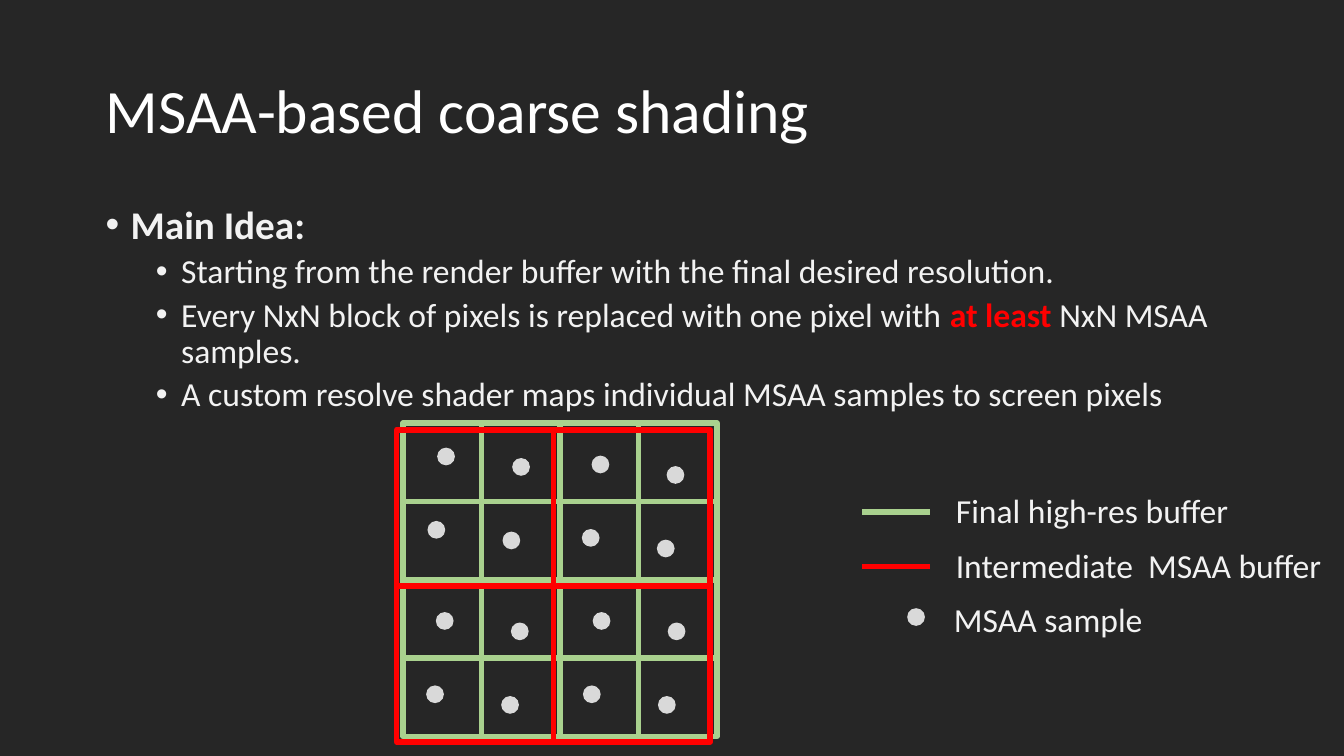
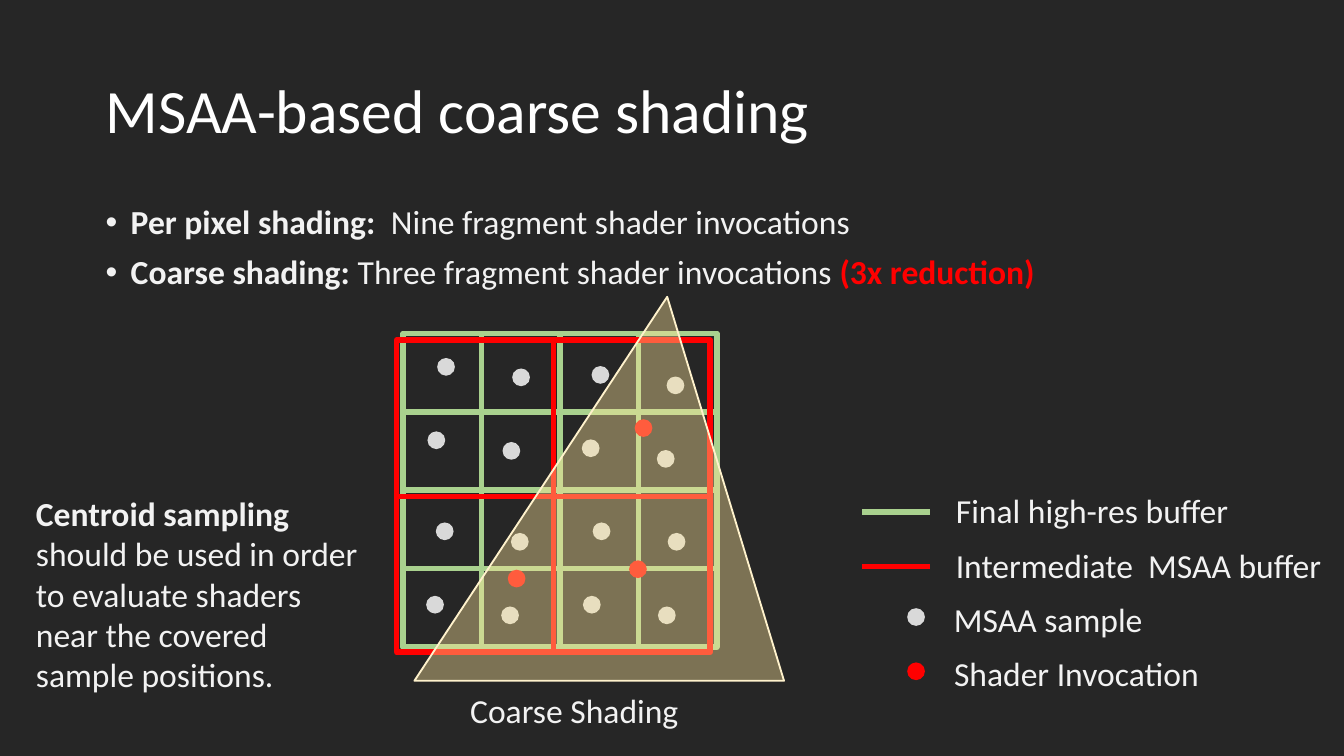
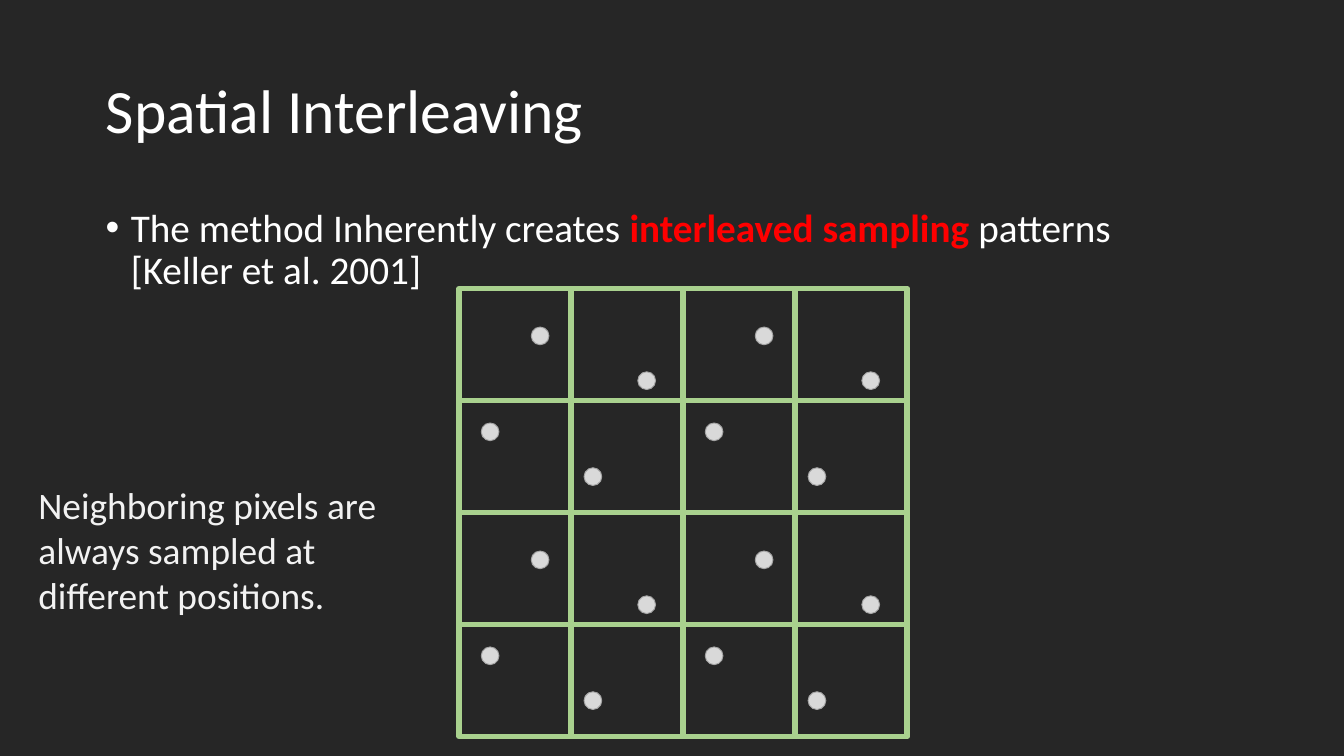
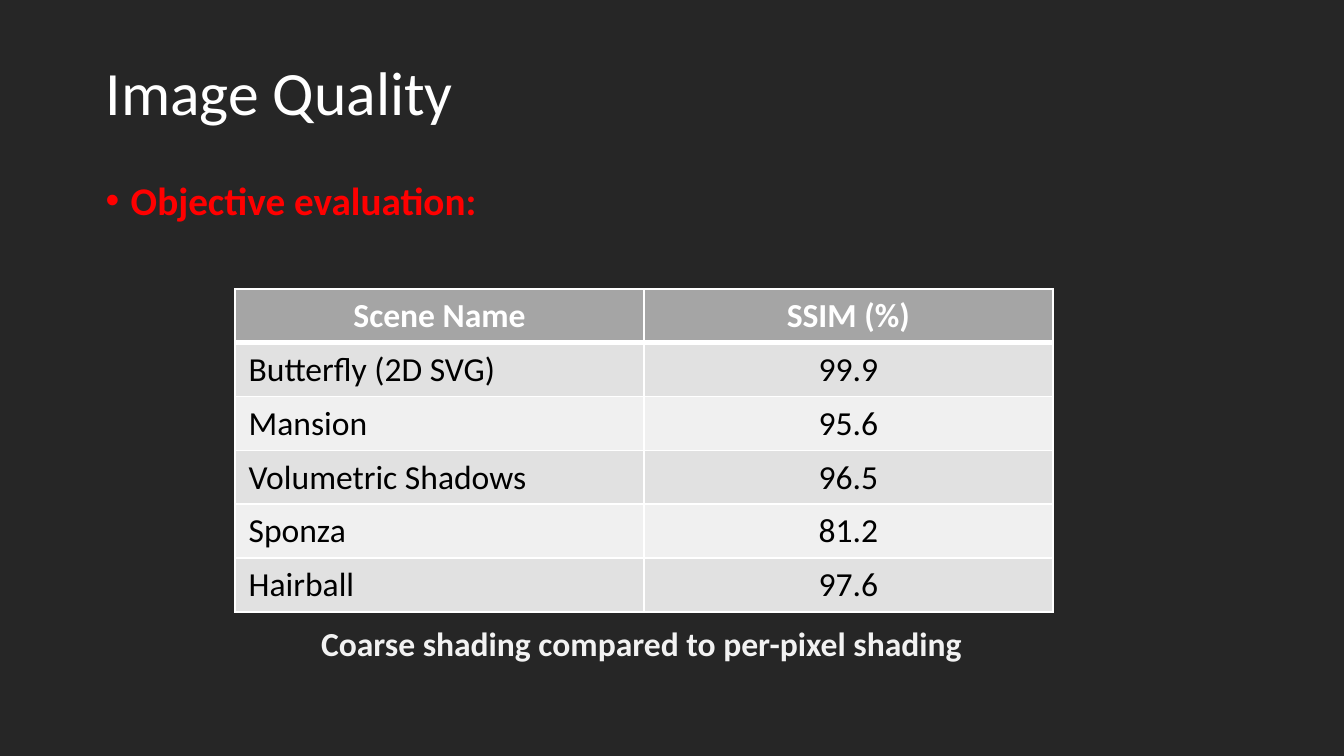
"""Build four slides on MSAA-based coarse shading."""
from itertools import product

from lxml import etree
from pptx import Presentation
from pptx.dml.color import RGBColor
from pptx.enum import shapes, text
from pptx.oxml import ns
from pptx.util import Pt

COLORS = {
    "background": "262626", "title": "FFFFFF", "body": "F2F2F2", "accent": "FF0000",
    "pixel": "A9D18E", "sample": "D9D9D9", "sample_edge": "A5A5A5",
    "triangle": "FFE699", "triangle_edge": "FFF2CC", "header": "A5A5A5",
    "band_odd": "E1E1E1", "band_even": "F0F0F0", "cell": "000000", "border": "FFFFFF",
}
FONT = "Calibri"
DOT = 9.5

IDEA = [
    (0, 21, [("Main Idea:", "body", True)]),
    (1, 18, [("Starting from the render buffer with the final desired resolution.", "body", False)]),
    (1, 18, [("Every NxN block of pixels is replaced with one pixel with ", "body", False),
             ("at least ", "accent", True), ("NxN MSAA samples.", "body", False)]),
    (1, 18, [("A custom resolve shader maps individual MSAA samples to screen pixels", "body", False)]),
]
COUNTS = [
    (0, 18, [("Per pixel shading:  ", "body", True),
             ("Nine fragment shader invocations", "body", False)]),
    (0, 18, [("Coarse shading: ", "body", True),
             ("Three fragment shader invocations ", "body", False),
             ("(3x reduction)", "accent", True)]),
]
INTERLEAVING = [
    (0, 21, [("The method Inherently creates ", "title", False),
             ("interleaved sampling ", "accent", True),
             ("patterns \n[Keller et al. 2001]", "title", False)]),
]
EVALUATION = [(0, 21, [("Objective evaluation:", "accent", True)])]
CENTROID = [("Centroid sampling ", "body", True),
            ("should be used in order to evaluate shaders near the covered sample positions.",
             "body", False)]
NEIGHBORS = [("Neighboring pixels are always sampled at different positions.", "body", False)]
CAPTION = [("Coarse shading compared to per-pixel shading", "body", True)]

LEGEND = [
    ("Final high-res buffer", "line", "pixel", 165),
    ("Intermediate  MSAA buffer", "line", "accent", 213),
    ("MSAA sample", "dot", "sample", 117),
    ("Shader Invocation", "dot", "accent", 147.6),
]
SCENES = [
    ("Scene Name", "SSIM (%)"), ("Butterfly (2D SVG)", "99.9"), ("Mansion", "95.6"),
    ("Volumetric Shadows", "96.5"), ("Sponza", "81.2"), ("Hairball", "97.6"),
]
MSAA_SAMPLES = [(18.2, 13.2), (13, 52.5), (58.4, 18.8), (53.2, 58.2)]
MSAA_SHIFTS = {(0, 0): (0, 0), (1, 0): (-1.3, 4.3), (0, 1): (-0.7, 4.1), (1, 1): (-0.7, 4.1)}
INTERLEAVED_SAMPLES = [(11.8, 72), (38.6, 20.6), (95.7, 44.6), (66.9, 96)]
INVOCATIONS = [(272, 305.2), (337, 300.2), (340, 224.6)]


def rgb(name):
    return RGBColor.from_string(COLORS[name])


def style_runs(p, runs, size):
    for content, color, bold in runs:
        for i, part in enumerate(content.split("\n")):
            if i:
                p.add_line_break()
            r = p.add_run()
            r.text = part
            r.font.name, r.font.size, r.font.bold = FONT, Pt(size), bold
            r.font.color.rgb = rgb(color)


def add_text(s, box, runs, size=18, wrap=False):
    tf = s.shapes.add_textbox(*map(Pt, box)).text_frame
    tf.word_wrap = wrap
    tf.auto_size = text.MSO_AUTO_SIZE.SHAPE_TO_FIT_TEXT
    style_runs(tf.paragraphs[0], runs, size)


def add_bullets(s, box, items):
    tf = s.shapes.add_textbox(*map(Pt, box)).text_frame
    tf.word_wrap = True
    for i, (level, size, runs) in enumerate(items):
        p = tf.add_paragraph() if i else tf.paragraphs[0]
        pPr = p._p.get_or_add_pPr()
        pPr.set("marL", str(Pt(13.5 + 27 * level)))
        pPr.set("indent", str(Pt(-13.5)))
        etree.SubElement(pPr, ns.qn("a:buFont")).set("typeface", "Arial")
        etree.SubElement(pPr, ns.qn("a:buChar")).set("char", "•")
        p.level, p.line_spacing = level, 0.9
        if i:
            p.space_before = Pt(3.75 if level else 7.5)
        style_runs(p, runs, size)


def add_shape(s, kind, box, fill=None, line=None, width=3):
    sp = s.shapes.add_shape(kind, *map(Pt, box))
    sp.shadow.inherit = False
    if fill:
        sp.fill.solid()
        sp.fill.fore_color.rgb = rgb(fill)
    else:
        sp.fill.background()
    if line:
        sp.line.color.rgb, sp.line.width = rgb(line), Pt(width)
    else:
        sp.line.fill.background()
    return sp


def add_line(s, color, x1, y1, x2, y2):
    c = s.shapes.add_connector(shapes.MSO_CONNECTOR.STRAIGHT, *map(Pt, (x1, y1, x2, y2)))
    c.line.color.rgb, c.line.width = rgb(color), Pt(3)
    etree.SubElement(c._element.spPr, ns.qn("a:effectLst"))
    return c


def add_quartered(s, color, x, y, w, h):
    sp = add_shape(s, shapes.MSO_SHAPE.RECTANGLE, (x, y, w, h), line=color)
    for start, end in ((1, 3), (0, 2)):
        c = add_line(s, color, x, y, x + w, y + h)
        c.begin_connect(sp, start)
        c.end_connect(sp, end)


def add_dot(s, x, y, fill="sample", line=None):
    add_shape(s, shapes.MSO_SHAPE.OVAL, (x, y, DOT, DOT), fill, line, 0.5)


def add_pixels(s, x, y, side):
    for row, col in product((1, 0), repeat=2):
        add_quartered(s, "pixel", x + col * side, y + row * side, side, side)


def add_samples(s, x, y, side, samples, shifts=None, line=None):
    for col, row in product(range(2), repeat=2):
        dx, dy = shifts[col, row] if shifts else (0, 0)
        for sx, sy in samples:
            add_dot(s, x + col * side + sx + dx, y + row * side + sy + dy, line=line)


def add_msaa_grid(s, y):
    x, side = 216, 84
    add_pixels(s, x, y, side)
    add_quartered(s, "accent", x - 3.5, y + 3.7, 2 * side, 167.2)
    add_samples(s, x, y, side, MSAA_SAMPLES, MSAA_SHIFTS)


def add_legend(s, entries):
    for i, (label, mark, color, width) in enumerate(entries):
        y = 259 + 29.1 * i
        if mark == "line":
            add_line(s, color, 462, y + 15.3, 498, y + 15.3)
        else:
            add_dot(s, 486, y + 8.6, color)
        add_text(s, (505 if mark == "line" else 504, y, width, 29), [(label, "body", False)])


def add_border(tcPr, side, width):
    ln = etree.SubElement(tcPr, ns.qn("a:ln" + side), w=str(Pt(width)))
    fill = etree.SubElement(ln, ns.qn("a:solidFill"))
    etree.SubElement(fill, ns.qn("a:srgbClr"), val=COLORS["border"])


def add_scene_table(s):
    frame = s.shapes.add_table(len(SCENES), 2, *map(Pt, (126, 154.8, 438, 172.8)))
    for i, row in enumerate(SCENES):
        fill = "header" if i == 0 else "band_odd" if i % 2 else "band_even"
        for j, value in enumerate(row):
            cell = frame.table.cell(i, j)
            tcPr = cell._tc.get_or_add_tcPr()
            for side in "LRTB":
                thick = (i, side) in ((0, "B"), (1, "T"))
                add_border(tcPr, side, 3 if thick else 1)
            cell.fill.solid()
            cell.fill.fore_color.rgb = rgb(fill)
            p = cell.text_frame.paragraphs[0]
            p.alignment = text.PP_ALIGN.CENTER if i == 0 or j else text.PP_ALIGN.LEFT
            style_runs(p, [(value, "cell" if i else "title", i == 0)], 18)


def add_slide(prs, title, top=21.6):
    s = prs.slides.add_slide(prs.slide_layouts[5])
    sp = s.shapes.title
    sp.left, sp.top, sp.width, sp.height = map(Pt, (49.5, top, 621, 78.3))
    tf = sp.text_frame
    tf.auto_size = text.MSO_AUTO_SIZE.NONE
    tf.vertical_anchor = text.MSO_ANCHOR.MIDDLE
    p = tf.paragraphs[0]
    p.alignment, p.line_spacing = text.PP_ALIGN.LEFT, 0.9
    style_runs(p, [(title, "title", False)], 33)
    return s


def add_triangle(s):
    sp = add_shape(s, shapes.MSO_SHAPE.ISOSCELES_TRIANGLE, (222, 159, 198, 205.7),
                   "triangle", "triangle_edge", 1)
    sp.adjustments[0] = 0.684
    color = sp._element.spPr.find(ns.qn("a:solidFill"))[0]
    etree.SubElement(color, ns.qn("a:alpha")).set("val", "40000")


def main():
    prs = Presentation()
    prs.slide_width, prs.slide_height = Pt(720), Pt(405)
    bg = prs.slide_master.background.fill
    bg.solid()
    bg.fore_color.rgb = rgb("background")

    s = add_slide(prs, "MSAA-based coarse shading")
    add_bullets(s, (49.5, 106.5, 634, 137), IDEA)
    add_msaa_grid(s, 226.6)
    add_legend(s, LEGEND[:3])

    s = add_slide(prs, "MSAA-based coarse shading")
    add_bullets(s, (49.5, 106.5, 634, 137), COUNTS)
    add_msaa_grid(s, 178.6)
    add_legend(s, LEGEND)
    for x, y in INVOCATIONS:
        add_dot(s, x, y, "accent")
    add_text(s, (244.8, 366, 127.4, 29), [("Coarse Shading", "body", False)])
    add_text(s, (12.2, 260.6, 191.5, 116.6), CENTROID, wrap=True)
    add_triangle(s)

    s = add_slide(prs, "Spatial Interleaving")
    add_bullets(s, (49.5, 108, 688, 142.6), INTERLEAVING)
    add_pixels(s, 246, 154.6, 120)
    add_samples(s, 246, 154.6, 120, INTERLEAVED_SAMPLES, line="sample_edge")
    add_text(s, (13.5, 255, 221, 80), NEIGHBORS, 20, True)

    s = add_slide(prs, "Image Quality", 12)
    add_bullets(s, (49.5, 93.6, 621, 257), EVALUATION)
    add_scene_table(s)
    add_text(s, (164.9, 330, 360.7, 29), CAPTION)

    prs.save("out.pptx")


if __name__ == "__main__":
    main()
